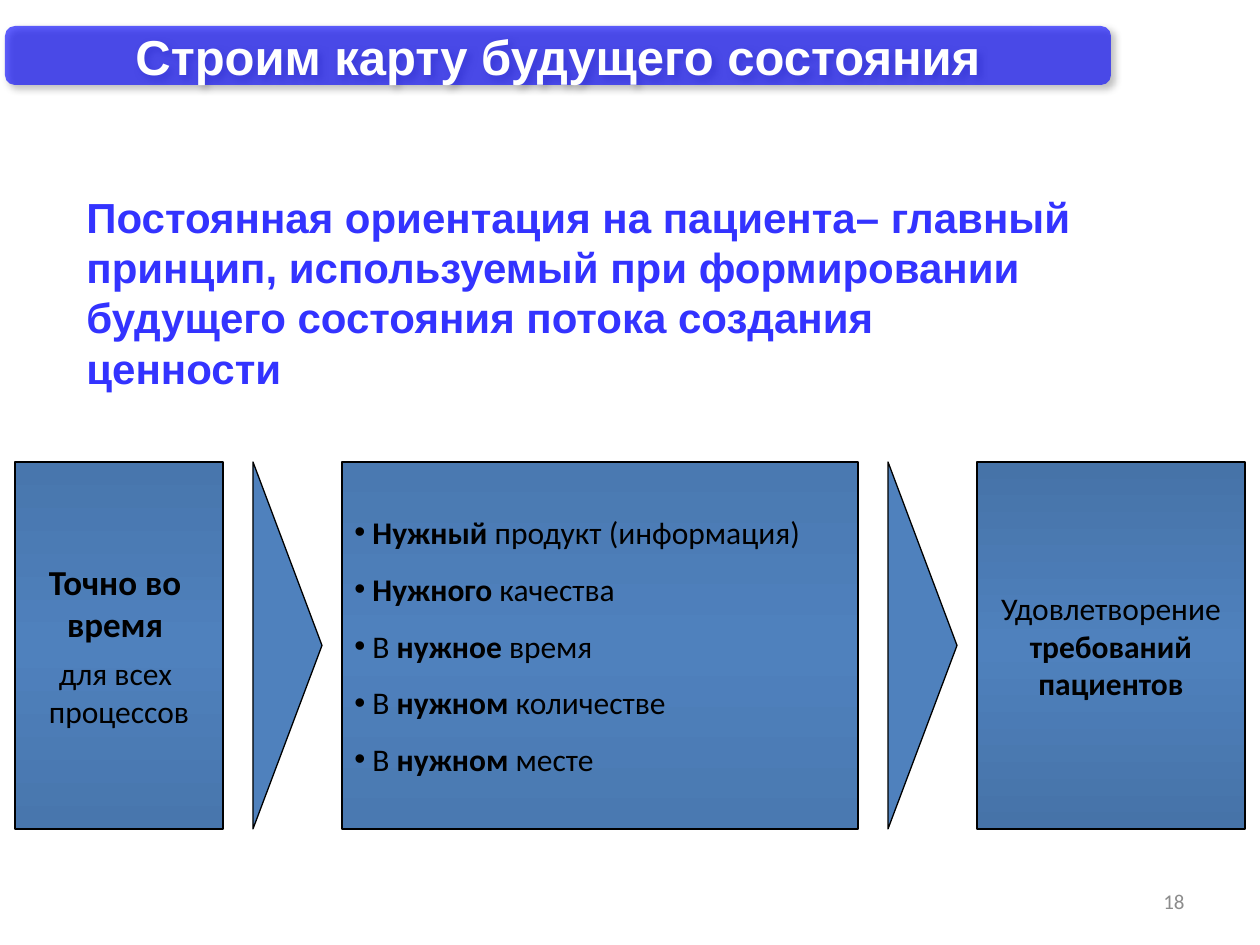
from lxml import etree
from pptx import Presentation
from pptx import util as u
from pptx.dml.color import RGBColor
from pptx.enum import shapes, text
from pptx.oxml.ns import qn

PX = 914400 / 126
ROW_TOP, ROW_HEIGHT = 462, 367
ARROW_DEPTH = 69
BLUE = "4F81BD"
CENTER = text.PP_ALIGN.CENTER


def px(length):
    """Turn whole pixels into EMU."""
    return u.Emu(int(length * PX))


def color(hex_string):
    """Turn a hex string into a colour."""
    return RGBColor.from_string(hex_string)


def add_child(parent, tag, **attributes):
    """Append a DrawingML element with its attributes."""
    child = etree.SubElement(parent, qn(tag))
    for key, value in attributes.items():
        child.set(key, str(value))
    return child


def write(frame, paragraphs, size, font="Calibri", ink="000000", bold=None,
          align=None, gap=0, bullet=None):
    """Fill a text frame; each paragraph is a list of (words, bold) runs."""
    for index, runs in enumerate(paragraphs):
        paragraph = frame.paragraphs[0] if index == 0 else frame.add_paragraph()
        if bullet:
            properties = paragraph._p.get_or_add_pPr()
            properties.set("marL", "0")
            properties.set("indent", "0")
            add_child(properties, "a:buFont", typeface="Arial")
            add_child(properties, "a:buChar", char=bullet)
        paragraph.alignment = align
        if index and gap:
            paragraph.space_before = u.Pt(gap)
        paragraph.font.size = u.Pt(size)
        paragraph.font.name = font
        paragraph.font.color.rgb = color(ink)
        paragraph.font.bold = bold
        for words, strong in runs:
            run = paragraph.add_run()
            run.text = words
            if strong is not None:
                run.font.bold = strong


def add_label(slide, left, top, width, height, words, size, font, ink,
              bold=None, align=None, anchor=text.MSO_ANCHOR.TOP):
    """Add a wrapping text box with one paragraph."""
    frame = slide.shapes.add_textbox(*map(px, (left, top, width, height))).text_frame
    frame.word_wrap = True
    frame.vertical_anchor = anchor
    write(frame, [[(words, None)]], size, font, ink, bold, align)


def add_title(slide, words):
    """Add the translucent title bar with its soft shadow."""
    bar = slide.shapes.add_shape(shapes.MSO_SHAPE.ROUNDED_RECTANGLE,
                                 *map(px, (5, 26, 1106, 59)))
    bar.shadow.inherit = False
    bar.line.fill.background()
    bar.fill.solid()
    bar.fill.fore_color.rgb = color("0000FF")
    properties = bar._element.spPr
    add_child(properties.find(".//" + qn("a:srgbClr")), "a:alpha", val=62000)
    shadow = add_child(properties.find(qn("a:effectLst")), "a:outerShdw",
                       blurRad=u.Pt(4), dist=u.Pt(3), dir=45 * 60000,
                       algn="tl", rotWithShape=0)
    add_child(add_child(shadow, "a:srgbClr", val="000000"), "a:alpha", val=40000)
    bar.text_frame.vertical_anchor = text.MSO_ANCHOR.MIDDLE
    write(bar.text_frame, [[(words, None)]], 28, "Arial", "FFFFFF", True, CENTER)


def outline(shape):
    """Give a shape a thin black line and no shadow."""
    shape.shadow.inherit = False
    shape.line.color.rgb = color("000000")
    shape.line.width = u.Pt(0.75)


def add_stage(slide, left, width, edge):
    """Add a box shaded from edge to middle and return its text frame."""
    box = slide.shapes.add_shape(shapes.MSO_SHAPE.RECTANGLE,
                                 *map(px, (left, ROW_TOP, width, ROW_HEIGHT)))
    outline(box)
    box.fill.gradient()
    box.fill.gradient_angle = 270
    stops = box._element.spPr.find(".//" + qn("a:gsLst"))
    for stop in list(stops):
        stops.remove(stop)
    for percent, shade in ((0, edge), (50, BLUE), (100, edge)):
        stop = add_child(stops, "a:gs", pos=percent * 1000)
        add_child(stop, "a:srgbClr", val=shade)
    frame = box.text_frame
    frame.word_wrap = True
    frame.vertical_anchor = text.MSO_ANCHOR.MIDDLE
    return frame


def add_arrow(slide, left):
    """Add a tall triangle that points to the right."""
    offset = (ROW_HEIGHT - ARROW_DEPTH) / 2
    arrow = slide.shapes.add_shape(
        shapes.MSO_SHAPE.ISOSCELES_TRIANGLE,
        *map(px, (left - offset, ROW_TOP + offset, ROW_HEIGHT, ARROW_DEPTH)))
    arrow.rotation = 90
    arrow.fill.solid()
    arrow.fill.fore_color.rgb = color(BLUE)
    outline(arrow)


def add_flow(slide):
    """Add the three stages and the arrows between them."""
    timing = add_stage(slide, 15, 208, "4876AD")
    timing.word_wrap = False
    write(timing, [[("Точно во ", None)], [("время ", None)]], 20,
          bold=True, align=CENTER)
    for words, gap in (("для всех ", 5.4), ("процессов", 0)):
        paragraph = timing.add_paragraph()
        paragraph.text = words
        paragraph.alignment = CENTER
        paragraph.space_before = u.Pt(gap)
        paragraph.font.size = u.Pt(18)
        paragraph.font.name = "Calibri"
        paragraph.font.color.rgb = color("000000")

    add_arrow(slide, 253)
    needs = add_stage(slide, 342, 516, "4A79B1")
    write(needs, [
        [(" ", None), ("Нужный", True), (" продукт (информация)", None)],
        [(" ", None), ("Нужного", True), (" качества", None)],
        [(" В ", None), ("нужное", True), (" время", None)],
        [(" В ", None), ("нужном", True), (" количестве", None)],
        [(" В ", None), ("нужном", True), (" месте", None)],
    ], 18, gap=10.8, bullet="•")

    add_arrow(slide, 888)
    result = add_stage(slide, 977, 268, "4673A8")
    result.margin_left = result.margin_right = px(8)
    write(result, [[("Удовлетворение ", None), ("требований пациентов", True)]],
          18, align=CENTER)


def main():
    """Build and save the slide."""
    deck = Presentation()
    deck.slide_width, deck.slide_height = px(1260), px(945)
    slide = deck.slides.add_slide(deck.slide_layouts[6])
    add_title(slide, "Строим карту будущего состояния")
    add_flow(slide)
    add_label(slide, 74, 185, 1012, 217,
              "Постоянная ориентация на пациента– главный принцип, используемый "
              "при формировании будущего состояния потока создания ценности",
              24, "Arial", "3333FF", bold=True)
    add_label(slide, 903, 876, 294, 50, "18", 12, "Calibri", "8C8C8C",
              align=text.PP_ALIGN.RIGHT, anchor=text.MSO_ANCHOR.MIDDLE)
    deck.save("out.pptx")


if __name__ == "__main__":
    main()
